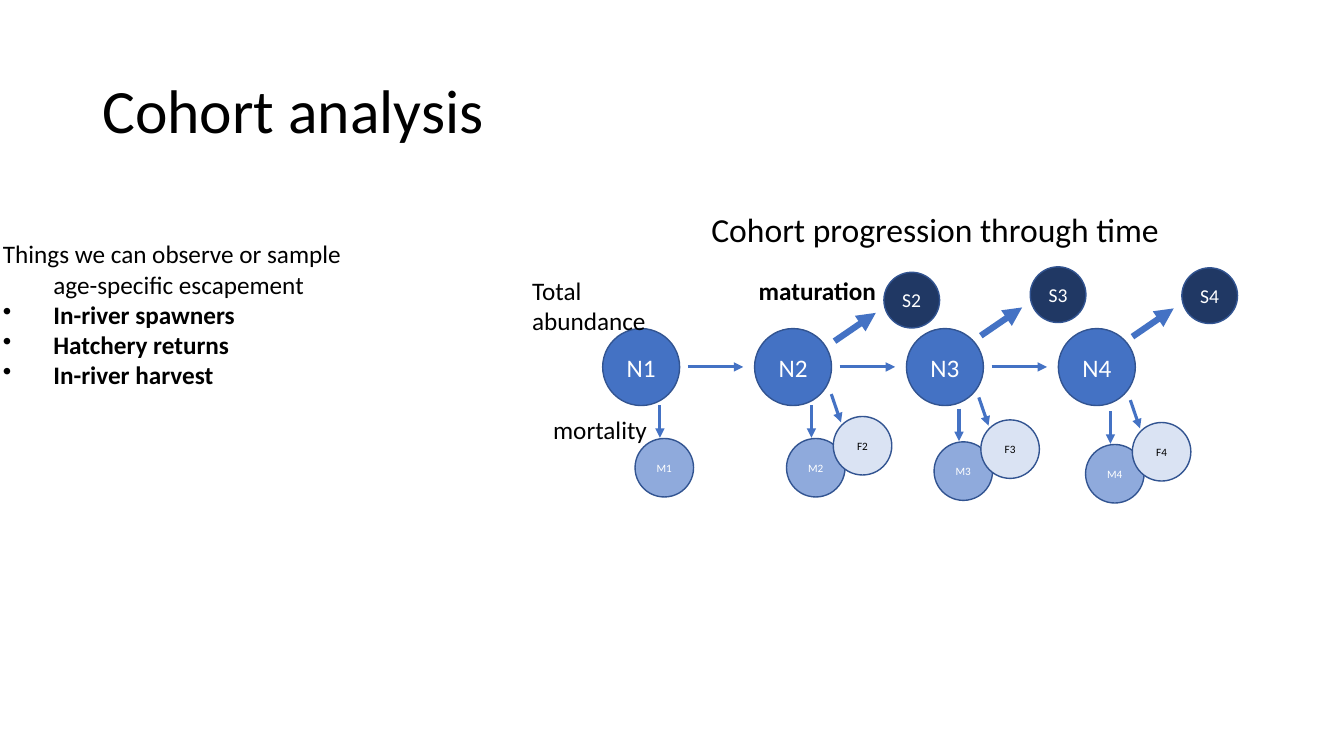
from lxml import etree
from pptx import Presentation
from pptx import util as u
from pptx.dml.color import RGBColor
from pptx.enum import shapes, text
from pptx.oxml.ns import qn

COLORS = {
    "ink": "000000", "white": "FFFFFF", "outline": "325491",
    "arrow": "4472C4", "abundance": "4472C4", "spawners": "203864",
    "mortality": "8FAADC", "fishery": "DAE3F3",
}


class CohortSlide:
    font = "Calibri"

    def __init__(self, deck):
        self.page = deck.slides.add_slide(deck.slide_layouts[6])

    def color(self, name):
        return RGBColor.from_string(COLORS[name])

    def style(self, para, size, color="ink", bold=False):
        para.font.name = self.font
        para.font.size = u.Pt(size)
        para.font.bold = bold
        para.font.color.rgb = self.color(color)

    def label(self, left, top, width, height, lines, size, bold=False, indent=0):
        box = self.page.shapes.add_textbox(*map(u.Pt, (left, top, width, height)))
        frame = box.text_frame
        frame.word_wrap = True
        for index, line in enumerate(lines):
            para = frame.paragraphs[0] if index == 0 else frame.add_paragraph()
            para.text = line
            self.style(para, size, bold=bold)
            if indent:
                self.indent(para, indent, 0)
        return frame

    def indent(self, para, margin, first):
        properties = para._p.get_or_add_pPr()
        properties.set("lvl", "1")
        properties.set("marL", str(u.Pt(margin)))
        properties.set("indent", str(u.Pt(first)))

    def bullet(self, para, margin, hanging):
        self.indent(para, margin, -hanging)
        para.font.bold = True
        mark = etree.Element(qn("a:buChar"), char="•")
        para._p.pPr.insert_element_before(mark, "a:tabLst", "a:defRPr", "a:extLst")

    def circle(self, left, top, diameter, name, size, fill, color="white"):
        disc = self.page.shapes.add_shape(
            shapes.MSO_SHAPE.OVAL, *map(u.Pt, (left, top, diameter, diameter)))
        disc.shadow.inherit = False
        disc.fill.solid()
        disc.fill.fore_color.rgb = self.color(fill)
        disc.line.color.rgb = self.color("outline")
        disc.line.width = u.Pt(1)
        frame = disc.text_frame
        frame.word_wrap = False
        frame.vertical_anchor = text.MSO_ANCHOR.MIDDLE
        para = frame.paragraphs[0]
        para.text = name
        para.alignment = text.PP_ALIGN.CENTER
        self.style(para, size, color)

    def arrow(self, x1, y1, x2, y2, width=2.25):
        line = self.page.shapes.add_connector(
            shapes.MSO_CONNECTOR.STRAIGHT, *map(u.Pt, (x1, y1, x2, y2)))
        line.line.color.rgb = self.color("arrow")
        line.line.width = u.Pt(width)
        etree.SubElement(line.line._get_or_add_ln(), qn("a:tailEnd"), type="triangle")
        etree.SubElement(line._element.spPr, qn("a:effectLst"))

    def spawners(self, age, left, top):
        self.circle(left, top, 39.8, f"S{age}", 14, "spawners")
        self.arrow(left - 35.3, top + 49.2, left - 5.8, top + 29, 4.5)

    def deaths(self, age, left, top):
        self.arrow(left + 17.8, top - 23.7, left + 17.8, top - 0.5)
        self.circle(left, top, 41.8, f"M{age}", 8, "mortality")

    def fishery(self, age, left, top):
        self.arrow(left + 32, top - 31.7, left + 38.9, top - 11.5)
        self.circle(left + 33.4, top - 15.7, 41.8, f"F{age}", 8, "fishery", "ink")


def main():
    deck = Presentation()
    deck.slide_width, deck.slide_height = u.Pt(960), u.Pt(540)
    slide = CohortSlide(deck)

    title = slide.label(66, 28.75, 828, 104.4, ["Cohort analysis"], 44)
    title.vertical_anchor = text.MSO_ANCHOR.MIDDLE
    title.paragraphs[0].line_spacing = 0.9

    first, step, top = 430.5, 108.5, 234.7
    for age in range(1, 5):
        left = first + step * (age - 1)
        slide.circle(left, top, 55, f"N{age}", 18, "abundance")
        if age < 4:
            slide.arrow(left + 60.8, 262.1, left + 100.4, 262.1)

    for age, left, top in [(2, 631.4, 194.5), (3, 735.9, 190.6), (4, 844.2, 191.3)]:
        slide.spawners(age, left, top)

    for age, left, top in [(1, 453.6, 313.2), (2, 561.8, 313.2),
                           (3, 667.2, 315.6), (4, 775.4, 317.5)]:
        slide.deaths(age, left, top)
        if age > 1:
            slide.fishery(age, left, top)

    observed = slide.label(-41, 167, 480, 116.6, [
        "Things we can observe or sample", "\tage-specific escapement",
        "\tIn-river spawners", "\tHatchery returns", "\tIn-river harvest",
    ], 18, indent=36)
    for para in observed.paragraphs[2:]:
        slide.bullet(para, 58.5, 22.5)

    slide.label(465, 145.4, 495, 36, ["Cohort progression through time"], 24, indent=36)
    slide.label(388, 292.3, 480, 29, ["mortality"], 18)
    slide.label(534.8, 193, 425, 29, ["maturation"], 18, bold=True)
    slide.label(373, 193, 134.6, 51, ["Total", "abundance"], 18)

    deck.save("out.pptx")


if __name__ == "__main__":
    main()
